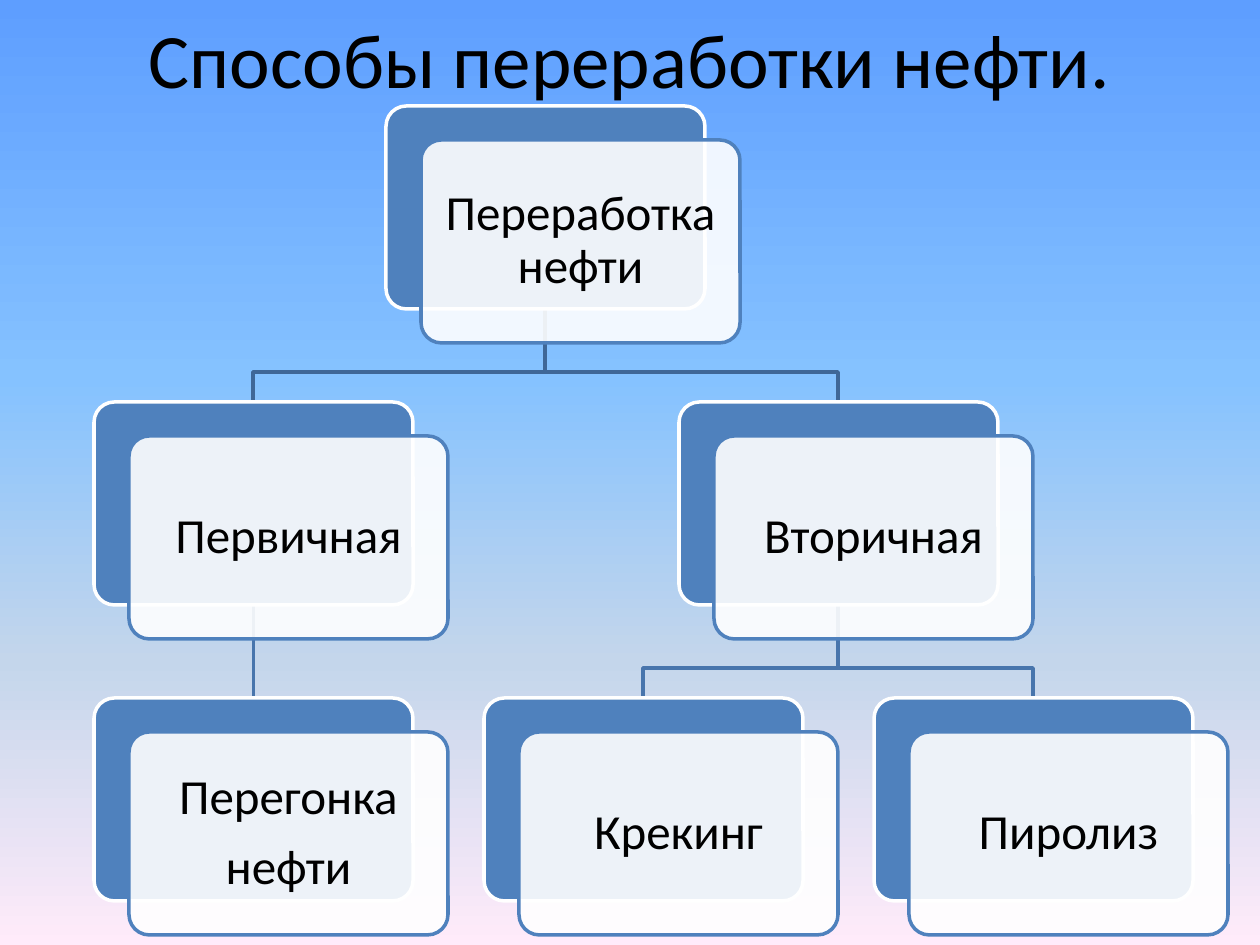
"""Build a slide with a tree of oil refining methods."""
from dataclasses import dataclass

from lxml import etree
from pptx import Presentation
from pptx.dml.color import RGBColor
from pptx.enum.shapes import MSO_CONNECTOR, MSO_SHAPE
from pptx.enum.text import MSO_ANCHOR, PP_ALIGN
from pptx.oxml.ns import qn
from pptx.util import Emu, Pt

STRAIGHT = MSO_CONNECTOR.STRAIGHT
ROUNDED = MSO_SHAPE.ROUNDED_RECTANGLE
MIDDLE = MSO_ANCHOR.MIDDLE
CENTER = PP_ALIGN.CENTER
TITLE_ONLY = 5
BOTTOM, TOP = 2, 0

EMU_PER_PX = 914400 / 126
FONT = "Calibri"
BLACK, WHITE, BLUE = "000000", "FFFFFF", "4F81BD"
ROOT_LINK, LEAF_LINK = "3F6797", "4875AC"
SKY = [(0, "5E9EFF"), (40, "85C2FF"), (70, "C4D6EB"), (100, "FFEBFA")]

CARD_WIDTH, CARD_HEIGHT = 319, 203
OFFSET_X, OFFSET_Y = 35, 34
FIRST_LEFT, COLUMN_STEP = 94, 390
FIRST_TOP, ROW_STEP = 106, 296
BEND_ABOVE_CHILD = 30
TEXT_MARGIN = 15


@dataclass
class Node:
    """A card of the tree, placed by column and row."""
    lines: list[str]
    column: float
    row: int

    @property
    def left(self) -> int:
        return round(FIRST_LEFT + self.column * COLUMN_STEP)

    @property
    def top(self) -> int:
        return FIRST_TOP + self.row * ROW_STEP

    @property
    def middle(self) -> int:
        return self.left + CARD_WIDTH // 2


@dataclass
class Link:
    """A line from a parent card to a child card."""
    parent: Node
    child: Node
    color: str


REFINING = Node(["Переработка нефти"], 0.75, 0)
PRIMARY = Node(["Первичная"], 0, 1)
SECONDARY = Node(["Вторичная"], 1.5, 1)
DISTILLATION = Node(["Перегонка", "нефти"], 0, 2)
CRACKING = Node(["Крекинг"], 1, 2)
PYROLYSIS = Node(["Пиролиз"], 2, 2)
NODES = [REFINING, PRIMARY, DISTILLATION, SECONDARY, CRACKING, PYROLYSIS]
LINKS = [
    Link(REFINING, PRIMARY, ROOT_LINK),
    Link(PRIMARY, DISTILLATION, LEAF_LINK),
    Link(REFINING, SECONDARY, ROOT_LINK),
    Link(SECONDARY, CRACKING, LEAF_LINK),
    Link(SECONDARY, PYROLYSIS, LEAF_LINK),
]


def px(length: float) -> Emu:
    """Turn pixels into EMU."""
    return Emu(round(length * EMU_PER_PX))


def rgb(value: str) -> RGBColor:
    """Turn a hex string into a colour."""
    return RGBColor.from_string(value)


def set_line(shape, color: str) -> None:
    """Give a shape or connector a two-point line."""
    shape.line.color.rgb = rgb(color)
    shape.line.width = Pt(2)


def format_paragraph(paragraph, size: int) -> None:
    """Centre a paragraph and set its font."""
    paragraph.alignment = CENTER
    paragraph.font.size = Pt(size)
    paragraph.font.name = FONT
    paragraph.font.color.rgb = rgb(BLACK)


def paint_background(slide) -> None:
    """Fill the background with the vertical sky gradient."""
    fill = slide.background.fill
    fill.gradient()
    fill.gradient_angle = 270
    stops = slide.element.find(f".//{qn('a:gsLst')}")
    for stop in list(stops):
        stops.remove(stop)
    for position, color in SKY:
        stop = etree.SubElement(stops, qn("a:gs"), pos=str(position * 1000))
        etree.SubElement(stop, qn("a:srgbClr"), val=color)


def write_title(slide, text: str) -> None:
    """Place and format the title placeholder."""
    title = slide.shapes.title
    title.left, title.top = px(63), px(-21)
    title.width, title.height = px(1134), px(158)
    title.text_frame.text = text
    title.text_frame.vertical_anchor = MIDDLE
    format_paragraph(title.text_frame.paragraphs[0], 44)


def draw_card(slide, left: int, top: int, fill: str, line: str):
    """Draw one rounded card."""
    card = slide.shapes.add_shape(
        ROUNDED, px(left), px(top), px(CARD_WIDTH), px(CARD_HEIGHT))
    card.adjustments[0] = 0.1
    card.shadow.inherit = False
    card.fill.solid()
    card.fill.fore_color.rgb = rgb(fill)
    set_line(card, line)
    return card


def draw_node(slide, node: Node):
    """Draw a node's two cards and return the back one."""
    back = draw_card(slide, node.left, node.top, BLUE, WHITE)
    front = draw_card(
        slide, node.left + OFFSET_X, node.top + OFFSET_Y, WHITE, BLUE)
    color = front.element.spPr.find(f"{qn('a:solidFill')}/{qn('a:srgbClr')}")
    etree.SubElement(color, qn("a:alpha"), val="90000")
    frame = front.text_frame
    frame.word_wrap = True
    frame.vertical_anchor = MIDDLE
    frame.margin_left = frame.margin_right = px(TEXT_MARGIN)
    frame.margin_top = frame.margin_bottom = px(TEXT_MARGIN)
    frame.text = "\n".join(node.lines)
    for paragraph in frame.paragraphs:
        format_paragraph(paragraph, 28)
        paragraph.line_spacing = 0.9
        paragraph.space_after = Pt(9.8)
    return back


def draw_link(slide, link: Link, parent_card, child_card) -> None:
    """Draw a straight or bent link behind the cards."""
    start_x, end_x = link.parent.middle, link.child.middle
    start_y, end_y = link.parent.top + CARD_HEIGHT, link.child.top
    if start_x == end_x:
        line = slide.shapes.add_connector(
            STRAIGHT, px(start_x), px(start_y), px(end_x), px(end_y))
        line.begin_connect(parent_card, BOTTOM)
        line.end_connect(child_card, TOP)
        etree.SubElement(line.element.spPr, qn("a:effectLst"))
    else:
        bend_y = end_y - BEND_ABOVE_CHILD
        builder = slide.shapes.build_freeform(start_x, start_y, EMU_PER_PX)
        builder.add_line_segments(
            [(start_x, bend_y), (end_x, bend_y), (end_x, end_y)], close=False)
        line = builder.convert_to_shape()
        line.fill.background()
        line.shadow.inherit = False
    set_line(line, link.color)
    slide.shapes.element.insert(2, line.element)


def main() -> None:
    """Build and save the presentation."""
    presentation = Presentation()
    presentation.slide_width, presentation.slide_height = px(1260), px(945)
    slide = presentation.slides.add_slide(
        presentation.slide_layouts[TITLE_ONLY])
    paint_background(slide)
    write_title(slide, "Способы переработки нефти.")
    cards = [draw_node(slide, node) for node in NODES]
    for link in LINKS:
        draw_link(slide, link, cards[NODES.index(link.parent)],
                  cards[NODES.index(link.child)])
    presentation.save("out.pptx")


if __name__ == "__main__":
    main()
